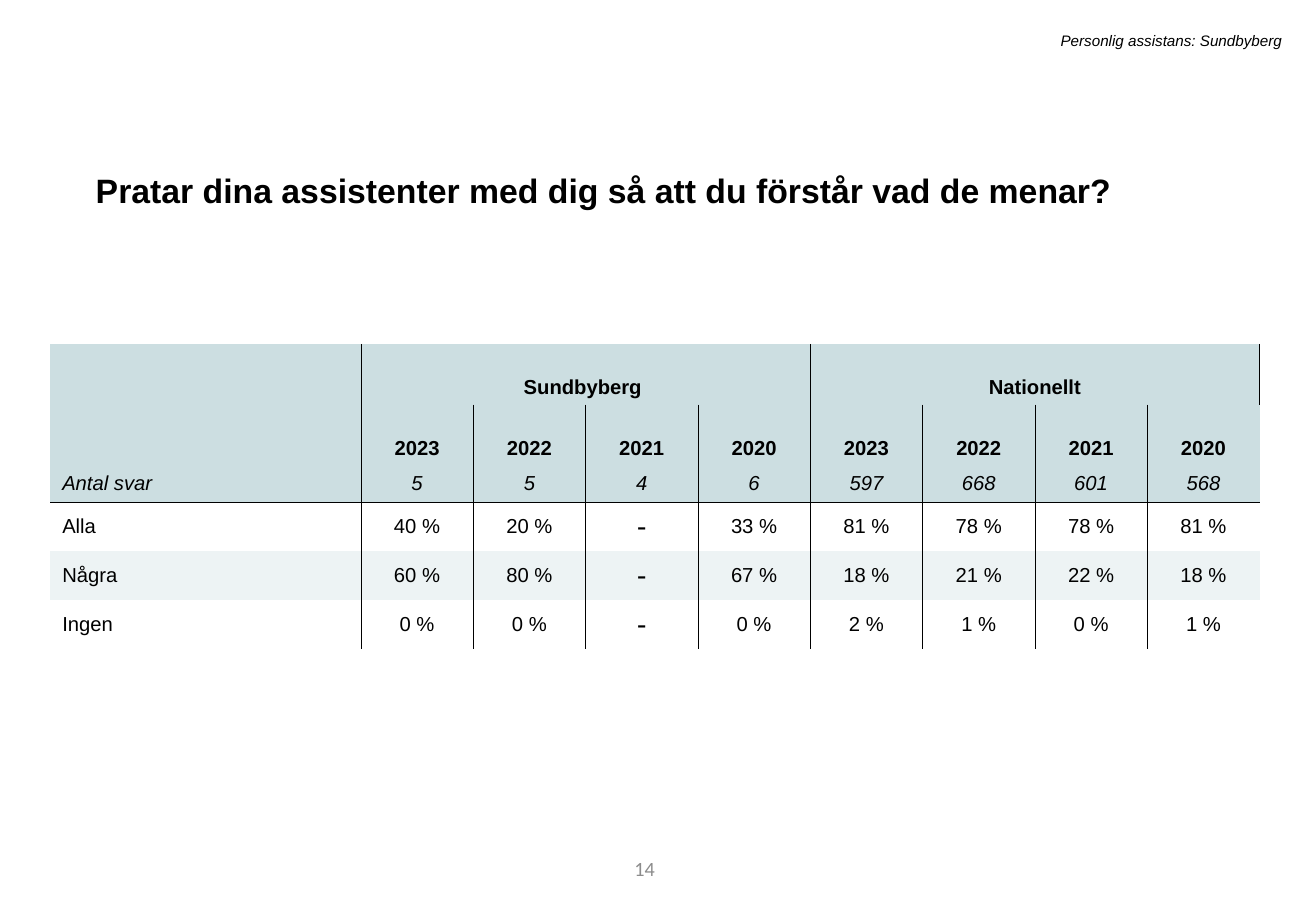
"""Build the survey slide on how well assistants make themselves understood."""
from dataclasses import dataclass, field

from lxml import etree
from pptx import Presentation, util as u
from pptx.dml.color import RGBColor
from pptx.enum import text as t
from pptx.oxml import ns

COLORS = {"ink": "000000", "header": "CCDEE1", "band": "EDF3F4", "page": "8C8C8C"}
YEARS = ["2023", "2022", "2021", "2020"]
ANSWERS = [
    ["", "Sundbyberg ", "", "", "", "Nationellt", "", "", ""],
    ["", *YEARS, *YEARS],
    ["Antal svar", "5", "5", "4", "6", "597", "668", "601", "568"],
    ["Alla", "40 %", "20 %", "-", "33 %", "81 %", "78 %", "78 %", "81 %"],
    ["Några", "60 %", "80 %", "-", "67 %", "18 %", "21 %", "22 %", "18 %"],
    ["Ingen", "0 %", "0 %", "-", "0 %", "2 %", "1 %", "0 %", "1 %"],
]
ROW_HEIGHTS = [36, 36, 21.8, 29, 29, 29]
COLUMN_WIDTHS = [184.2] + [66.6] * 8
ROW_FILLS = ["header"] * 3 + [None, "band", None]
GROUP_STARTS = (1, 5)
GROUP_SIZE = len(YEARS)


@dataclass
class Style:
    size: float = 12
    name: str = "Arial"
    color: str = "ink"
    bold: bool = False
    italic: bool = False


@dataclass
class Label:
    wording: str
    box: tuple[float, float, float, float]
    style: Style
    paragraph: dict = field(default_factory=dict)
    frame: dict = field(default_factory=dict)


RIGHT = {"alignment": t.PP_ALIGN.RIGHT}
GROW = {"auto_size": t.MSO_AUTO_SIZE.SHAPE_TO_FIT_TEXT}
LABELS = [
    Label("14", (219.6, 500.4, 175.7, 28.8), Style(12, "Calibri", "page"),
          RIGHT, {"vertical_anchor": t.MSO_ANCHOR.MIDDLE}),
    Label("Pratar dina assistenter med dig så att du förstår vad de menar?",
          (49.7, 92.2, 676.8, 33.8), Style(20, bold=True),
          {"line_spacing": 1.2, "space_before": u.Pt(10)}, GROW),
    Label("Personlig assistans: Sundbyberg", (128.9, 15.1, 637.9, 18),
          Style(9, italic=True), RIGHT, GROW),
]


def apply(target: object, formats: dict) -> None:
    for attribute, value in formats.items():
        setattr(target, attribute, value)


def write(paragraph, wording: str, style: Style) -> None:
    run = paragraph.add_run()
    run.text = wording
    apply(run.font, {"size": u.Pt(style.size), "name": style.name,
                     "bold": style.bold, "italic": style.italic})
    run.font.color.rgb = RGBColor.from_string(COLORS[style.color])


def draw_label(slide, label: Label) -> None:
    frame = slide.shapes.add_textbox(*map(u.Pt, label.box)).text_frame
    apply(frame, {"word_wrap": True, **label.frame})
    apply(frame.paragraphs[0], label.paragraph)
    write(frame.paragraphs[0], label.wording, label.style)


def cell_style(row: int, wording: str) -> Style:
    if wording == "-":
        return Style(18, "Calibri")
    return Style(bold=row < 2, italic=row == 2)


def has_vertical(row: int, edge: int) -> bool:
    if row == 0:
        return edge in (*GROUP_STARTS, len(COLUMN_WIDTHS))
    return 0 < edge < len(COLUMN_WIDTHS)


def draw_borders(cell, row: int, column: int) -> None:
    sides = {"L": has_vertical(row, column),
             "R": has_vertical(row, column + cell.span_width),
             "T": row == 3, "B": row == 2}
    properties = cell._tc.get_or_add_tcPr()
    for position, (side, visible) in enumerate(sides.items()):
        line = etree.Element(ns.qn(f"a:ln{side}"), w=str(u.Pt(0.25)))
        paint = etree.SubElement(line, ns.qn("a:solidFill" if visible else "a:noFill"))
        if visible:
            etree.SubElement(paint, ns.qn("a:srgbClr"), val=COLORS["ink"])
        properties.insert(position, line)


def draw_cell(cell, row: int, column: int, wording: str) -> None:
    cell.vertical_anchor = t.MSO_ANCHOR.BOTTOM if row < 2 else t.MSO_ANCHOR.MIDDLE
    fill = ROW_FILLS[row]
    if fill:
        cell.fill.solid()
        cell.fill.fore_color.rgb = RGBColor.from_string(COLORS[fill])
    else:
        cell.fill.background()
    draw_borders(cell, row, column)
    if wording:
        paragraph = cell.text_frame.paragraphs[0]
        paragraph.alignment = t.PP_ALIGN.CENTER if column else t.PP_ALIGN.LEFT
        write(paragraph, wording, cell_style(row, wording))


def draw_answers(slide) -> None:
    box = (29.7, 203.9, sum(COLUMN_WIDTHS), sum(ROW_HEIGHTS))
    answers = slide.shapes.add_table(
        len(ROW_HEIGHTS), len(COLUMN_WIDTHS), *map(u.Pt, box)).table
    apply(answers, {"first_row": False, "horz_banding": False})
    for column, width in zip(answers.columns, COLUMN_WIDTHS):
        column.width = u.Pt(width)
    for row, height in zip(answers.rows, ROW_HEIGHTS):
        row.height = u.Pt(height)
    for start in GROUP_STARTS:
        answers.cell(0, start).merge(answers.cell(0, start + GROUP_SIZE - 1))
    for row, wordings in enumerate(ANSWERS):
        for column, wording in enumerate(wordings):
            draw_cell(answers.cell(row, column), row, column, wording)


def main() -> None:
    deck = Presentation()
    apply(deck, {"slide_width": u.Pt(780), "slide_height": u.Pt(540)})
    slide = deck.slides.add_slide(deck.slide_layouts[6])
    for label in LABELS:
        draw_label(slide, label)
    draw_answers(slide)
    deck.save("out.pptx")


if __name__ == "__main__":
    main()
